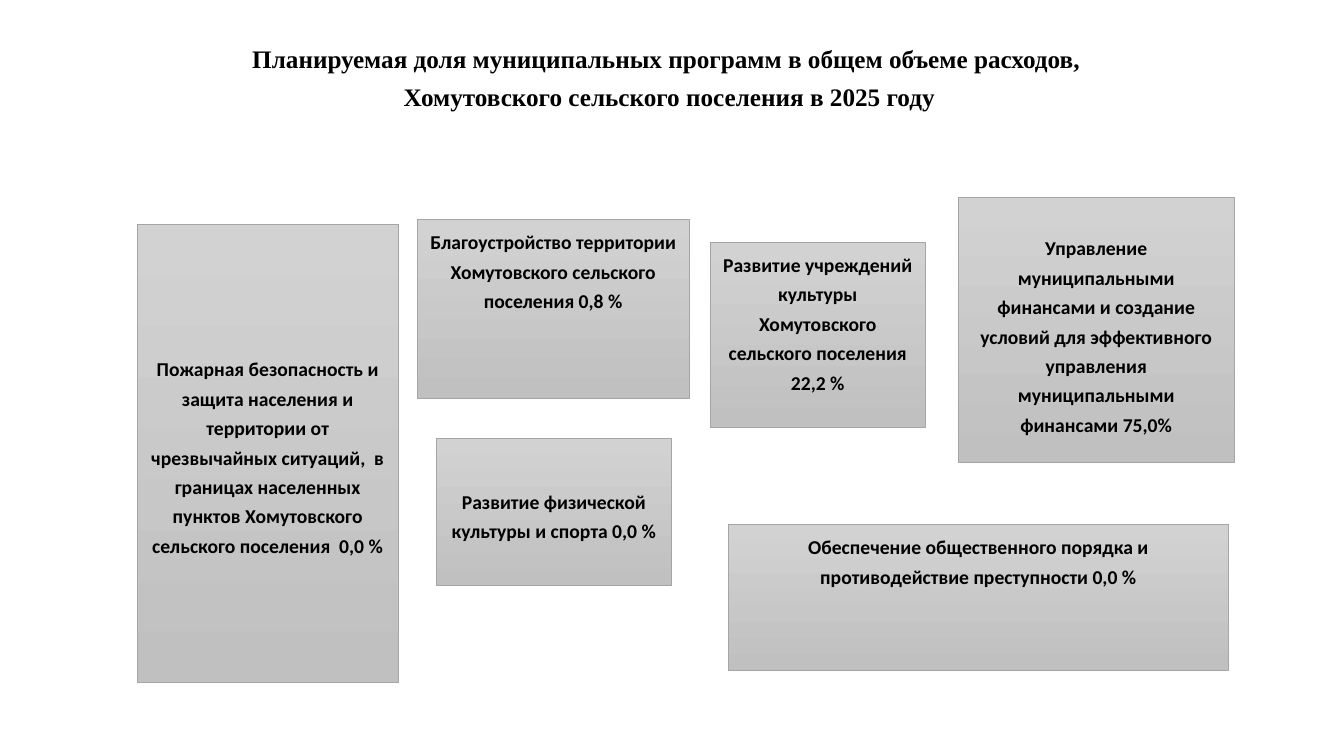
import pptx
import pptx.dml.color
import pptx.enum.shapes
import pptx.enum.text
import pptx.util

Pt = pptx.util.Pt

COLORS = {
    "text": "000000",
    "box_top": "D2D2D2",
    "box_bottom": "C0C0C0",
    "box_line": "A5A5A5",
}

TITLE_LINES = [
    "Планируемая доля муниципальных программ в общем объеме расходов, ",
    "Хомутовского сельского поселения в 2025 году",
]

PROGRAMS = [
    ("Пожарная безопасность и защита населения и территории от чрезвычайных "
     "ситуаций,  в границах населенных пунктов Хомутовского сельского "
     "поселения  0,0 %", (98, 160.4, 186.5, 327), 90.6),
    ("Обеспечение общественного порядка и противодействие преступности 0,0 %",
     (520.3, 374.4, 357.2, 104.4), 3.6),
    ("Управление муниципальными финансами и создание условий для эффективного "
     "управления муниципальными финансами 75,0%",
     (684.8, 141, 196.6, 189.4), 23.6),
    ("Благоустройство территории Хомутовского сельского поселения 0,8 %",
     (298, 156.8, 194.4, 127.5), 3.6),
    ("Развитие учреждений культуры Хомутовского сельского поселения 22,2 %",
     (507.4, 172.9, 153.5, 132.5), 3.6),
    ("Развитие физической культуры и спорта 0,0 %",
     (311.7, 313.1, 168, 105.2), 32.6),
]


def rgb(name):
    return pptx.dml.color.RGBColor.from_string(COLORS[name])


def write_text(shape, lines, font="Calibri", size=14, top_inset=3.6, space_after=0):
    frame = shape.text_frame
    frame.word_wrap = True
    frame.vertical_anchor = pptx.enum.text.MSO_ANCHOR.TOP
    frame.margin_top = Pt(top_inset)
    for index, line in enumerate(lines):
        paragraph = frame.add_paragraph() if index else frame.paragraphs[0]
        paragraph.alignment = pptx.enum.text.PP_ALIGN.CENTER
        paragraph.line_spacing = 1.25
        paragraph.space_after = Pt(space_after)
        run = paragraph.add_run()
        run.text = line
        run.font.name = font
        run.font.size = Pt(size)
        run.font.bold = True
        run.font.color.rgb = rgb("text")


def add_title(slide, box):
    title = slide.shapes.add_textbox(*map(Pt, box))
    write_text(title, TITLE_LINES, font="Times New Roman", size=18)


def add_program(slide, box, text, top_inset):
    shape = slide.shapes.add_shape(
        pptx.enum.shapes.MSO_SHAPE.FLOWCHART_PROCESS, *map(Pt, box))
    shape.shadow.inherit = False
    shape.fill.gradient()
    shape.fill.gradient_angle = 270
    for stop, name in zip(shape.fill.gradient_stops, ("box_top", "box_bottom")):
        stop.color.rgb = rgb(name)
    shape.line.color.rgb = rgb("box_line")
    shape.line.width = Pt(0.5)
    write_text(shape, [text], top_inset=top_inset, space_after=8)


def main():
    presentation = pptx.Presentation()
    presentation.slide_width = Pt(960)
    presentation.slide_height = Pt(540)
    slide = presentation.slides.add_slide(presentation.slide_layouts[6])
    add_title(slide, (62, 22.3, 832.3, 59))
    for text, box, top_inset in PROGRAMS:
        add_program(slide, box, text, top_inset)
    presentation.save("out.pptx")


if __name__ == "__main__":
    main()
